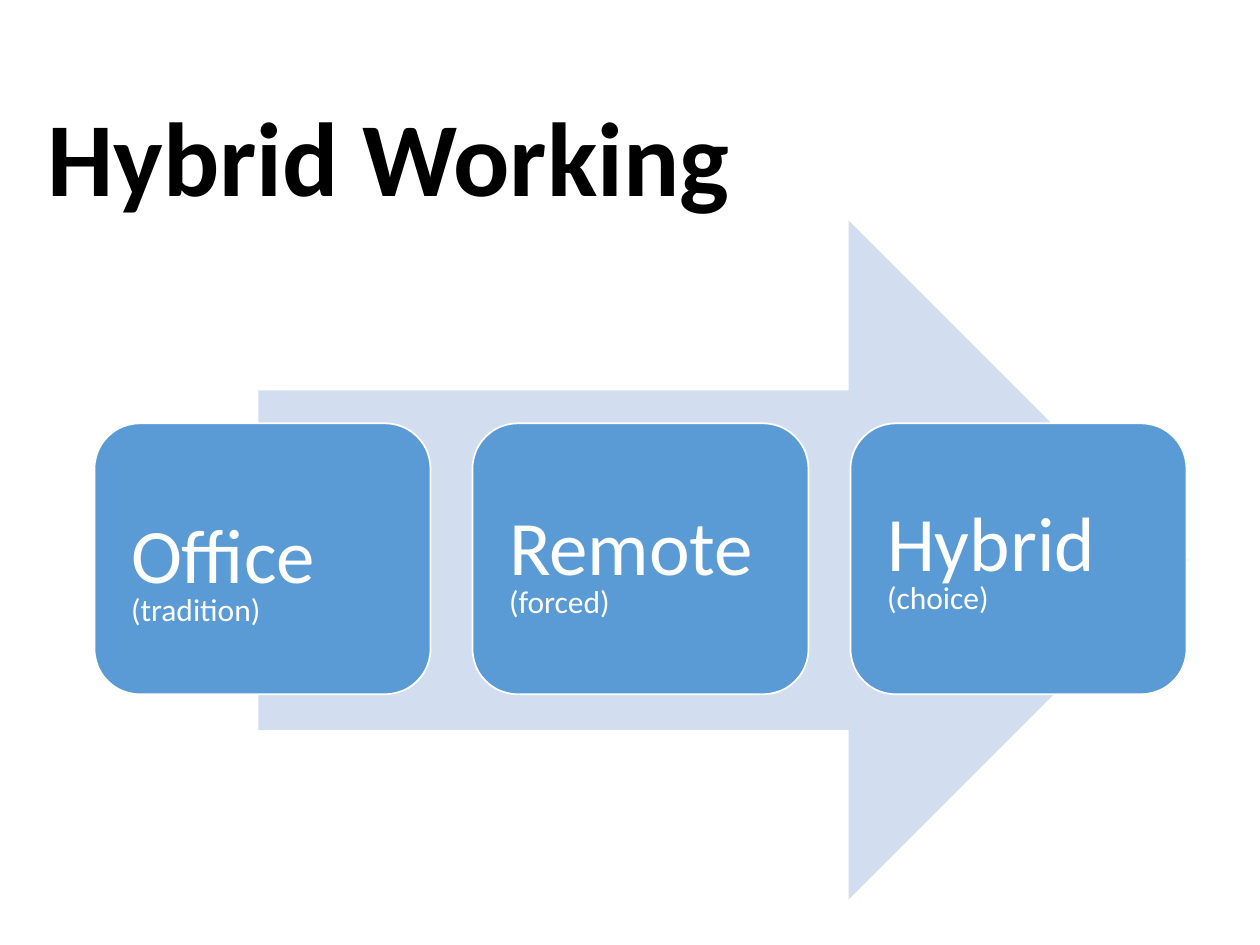
from pptx import Presentation
from pptx.dml.color import RGBColor
from pptx.enum.shapes import MSO_SHAPE
from pptx.enum.text import MSO_ANCHOR, PP_ALIGN
from pptx.util import Pt

ARROW = MSO_SHAPE.RIGHT_ARROW
ROUNDED = MSO_SHAPE.ROUNDED_RECTANGLE
TOP, BOTTOM = MSO_ANCHOR.TOP, MSO_ANCHOR.BOTTOM
LEFT = PP_ALIGN.LEFT

FONT = "Calibri"
BLACK, WHITE = "000000", "FFFFFF"
BLUE, PALE_BLUE = "5B9BD5", "D2DEEF"

STAGE_LEFT, STAGE_TOP, STAGE_PITCH = 54, 241.92, 216
STAGE_WIDTH, STAGE_HEIGHT = 192, 154.8
# name, note, distance from the top of the box to the text
STAGES = [
    ("Office", "(tradition)", 47.6),
    ("Remote", "(forced)", 43),
    ("Hybrid", "(choice)", 40.8),
]


def color(hex_code):
    return RGBColor.from_string(hex_code)


def style(p, size, hex_code, bold=False):
    p.alignment = LEFT
    p.font.name = FONT
    p.font.size = Pt(size)
    p.font.bold = bold
    p.font.color.rgb = color(hex_code)


def set_frame(tf, anchor, left, top, right, bottom):
    tf.word_wrap = True
    tf.vertical_anchor = anchor
    tf.margin_left, tf.margin_top = Pt(left), Pt(top)
    tf.margin_right, tf.margin_bottom = Pt(right), Pt(bottom)


def add_box(s, kind, x, y, w, h, fill, line=None):
    sp = s.shapes.add_shape(kind, Pt(x), Pt(y), Pt(w), Pt(h))
    sp.shadow.inherit = False
    sp.fill.solid()
    sp.fill.fore_color.rgb = color(fill)
    if line:
        sp.line.color.rgb = color(line)
        sp.line.width = Pt(1)
    else:
        sp.line.fill.background()
    return sp


def add_title(s, text):
    box = s.shapes.add_textbox(Pt(21.6), Pt(36), Pt(620.64), Pt(90))
    tf = box.text_frame
    set_frame(tf, BOTTOM, 5.4, 2.7, 5.4, 1)
    p = tf.paragraphs[0]
    p.text = text
    p.line_spacing = 0.9
    style(p, 60, BLACK, bold=True)


def add_stage(s, x, name, note, text_top):
    sp = add_box(s, ROUNDED, x, STAGE_TOP, STAGE_WIDTH, STAGE_HEIGHT, BLUE, WHITE)
    tf = sp.text_frame
    # The preset's text area is already inset by the rounded corners.
    corner = 0.29289 * 0.16667 * STAGE_HEIGHT
    set_frame(tf, TOP, 20.88 - corner, text_top - corner, 13, 0)
    p = tf.paragraphs[0]
    p.text = name
    style(p, 44, WHITE)
    p = tf.add_paragraph()
    p.text = note
    p.line_spacing = Pt(16.4)
    style(p, 18, WHITE)


def main():
    prs = Presentation()
    prs.slide_width, prs.slide_height = Pt(720), Pt(540)
    s = prs.slides.add_slide(prs.slide_layouts[6])
    add_title(s, "Hybrid Working")
    add_box(s, ARROW, 147.6, 126, 531.36, 388.08, PALE_BLUE)
    for i, (name, note, text_top) in enumerate(STAGES):
        add_stage(s, STAGE_LEFT + i * STAGE_PITCH, name, note, text_top)
    prs.save("out.pptx")


if __name__ == "__main__":
    main()
